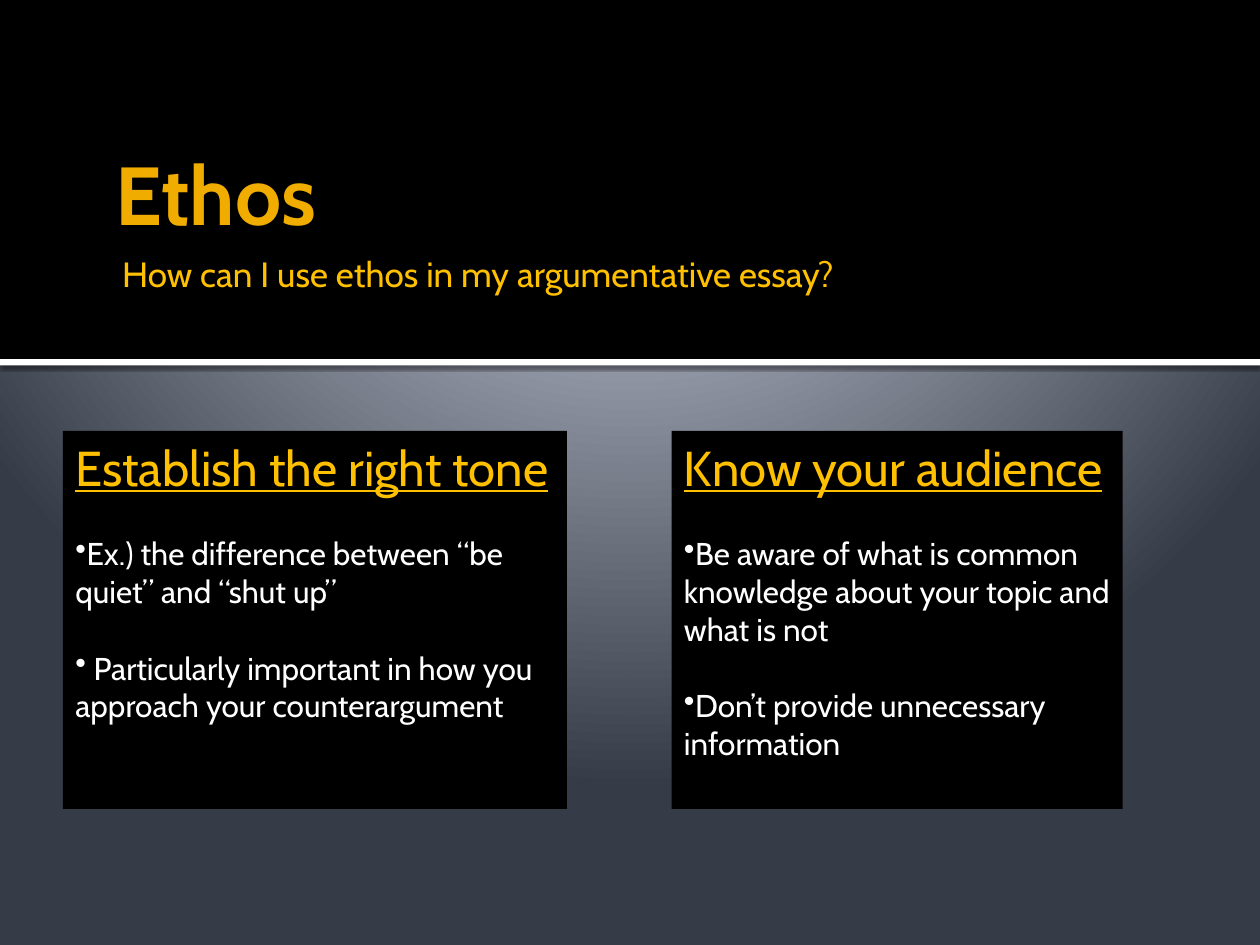
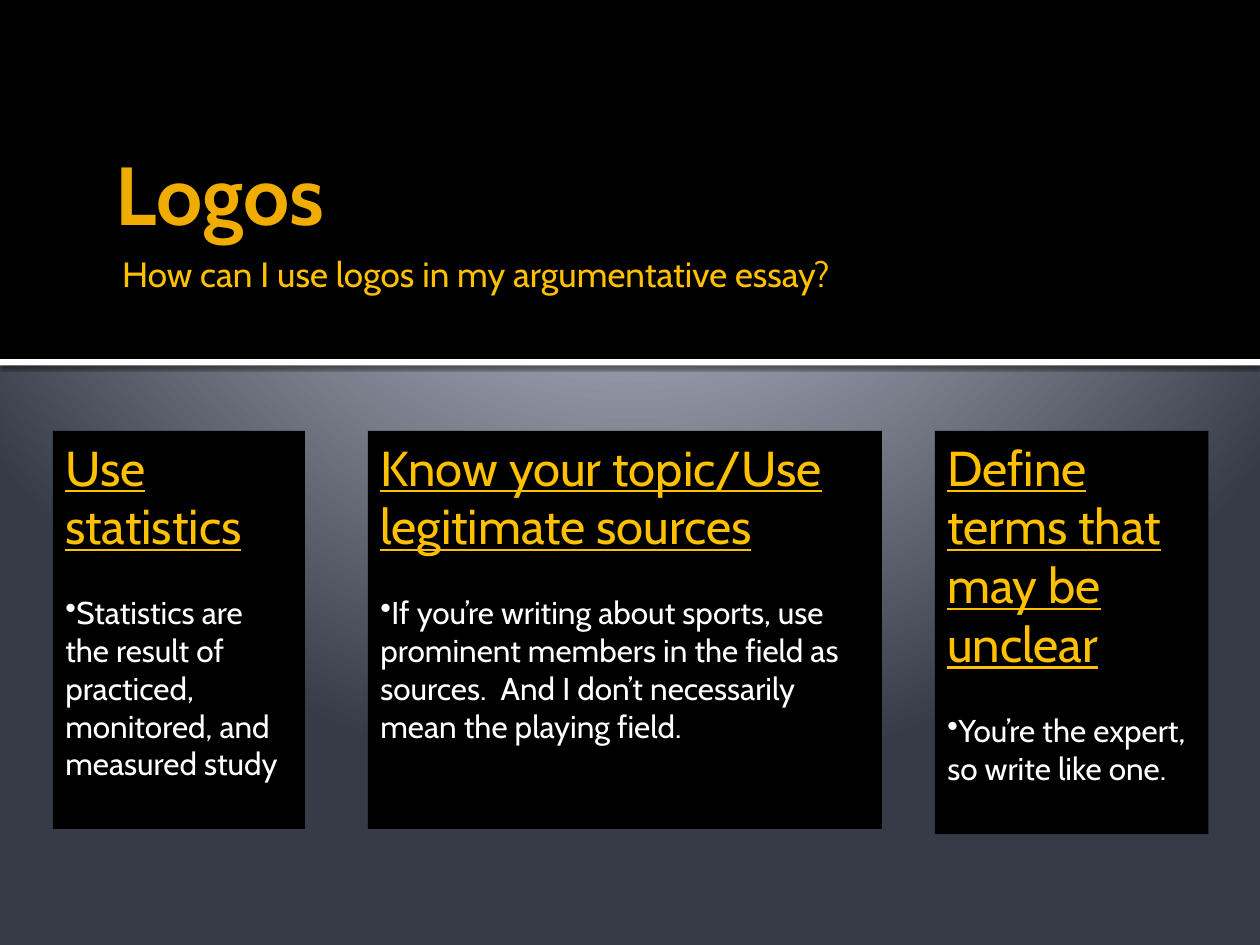
from pptx import Presentation
from pptx.dml.color import RGBColor
from pptx.enum.shapes import MSO_SHAPE
from pptx.enum.text import MSO_ANCHOR, MSO_AUTO_SIZE, PP_ALIGN
from pptx.oxml import parse_xml
from pptx.oxml.ns import nsdecls, qn
from pptx.util import Inches, Pt

RECT = MSO_SHAPE.RECTANGLE
TOP, BOTTOM = MSO_ANCHOR.TOP, MSO_ANCHOR.BOTTOM
LEFT = PP_ALIGN.LEFT
NO_FIT = MSO_AUTO_SIZE.NONE


class Theme:
    font = "Cabin"
    black, white = "000000", "FFFFFF"
    title, gold = "F0AD00", "FFC000"
    glow = [(0, "C1C5D3"), (12, "C1C5D3"), (20, "BFC4D2"), (100, "353B47")]
    title_size, sub_size, head_size, text_size = 47, 20, 28, 18
    gap = 22  # space above each bullet, in points


# Each card: left, width, height, heading, bullets
SLIDES = [
    ("Ethos", "How can I use ethos in my argumentative essay?", [
        (0.5, 4, 3, "Establish the right tone", [
            "Ex.) the difference between “be quiet” and “shut up”",
            " Particularly important in how you approach your counterargument"]),
        (5.33, 3.58, 3, "Know your audience", [
            "Be aware of what is common knowledge about your topic and what is not",
            "Don’t provide unnecessary information"]),
    ]),
    ("Logos", "How can I use logos in my argumentative essay?", [
        (0.42, 2, 3.16, "Use statistics", [
            "Statistics are the result of practiced, monitored, and measured study"]),
        (2.92, 4.08, 3.16, "Know your topic/Use legitimate sources", [
            "If you’re writing about sports, use prominent members in the field as "
            "sources.  And I don’t necessarily mean the playing field."]),
        (7.42, 2.17, 3.2, "Define terms that may be unclear", [
            "You’re the expert, so write like one."]),
    ]),
]
CARD_TOP = 3.42


def block(slide, left, top, width, height, color):
    """Add a plain filled rectangle, sized in inches."""
    shape = slide.shapes.add_shape(
        RECT, Inches(left), Inches(top), Inches(width), Inches(height))
    shape.shadow.inherit = False
    shape.fill.solid()
    shape.fill.fore_color.rgb = RGBColor.from_string(color)
    shape.line.fill.background()
    return shape


def write(para, text, size, color):
    para.text = text
    para.alignment = LEFT
    para.font.name = Theme.font
    para.font.size = Pt(size)
    para.font.color.rgb = RGBColor.from_string(color)


prs = Presentation()
prs.slide_width, prs.slide_height = Inches(10), Inches(7.5)
layout = prs.slide_layouts.get_by_name("Title Only")

# Shared background: a glow from above the slide
layout.background.fill.background()
stops = "".join(
    f'<a:gs pos="{pos * 1000}"><a:srgbClr val="{color}"/></a:gs>'
    for pos, color in Theme.glow)
back = layout.element.find(".//" + qn("p:bgPr"))
back.replace(back[0], parse_xml(
    f'<a:gradFill {nsdecls("a")} rotWithShape="1"><a:gsLst>{stops}</a:gsLst>'
    '<a:path path="circle">'
    '<a:fillToRect l="10000" t="-25000" r="10000" b="125000"/>'
    '</a:path></a:gradFill>'))

slides = [prs.slides.add_slide(layout) for _ in SLIDES]

# Shared bands: drawn once, then moved to the layout
band = block(slides[0], 0, 0, 10, 2.85, Theme.black)
rule = block(slides[0], 0, 2.85, 10, 0.05, Theme.white)
effects = rule.element.spPr.find(qn("a:effectLst"))
effects.append(parse_xml(
    f'<a:outerShdw {nsdecls("a")} blurRad="{Pt(2.5)}" dist="{Pt(0.8)}" '
    'dir="5400000" algn="t" rotWithShape="0">'
    f'<a:srgbClr val="{Theme.black}"><a:alpha val="60000"/></a:srgbClr>'
    '</a:outerShdw>'))
tree = layout.element.cSld.spTree
for place, shape in enumerate((band, rule), start=2):
    tree.insert(place, shape.element)

for slide, (name, question, cards) in zip(slides, SLIDES):
    title = slide.shapes.title
    title.left, title.top = Inches(0.82), Inches(0.13)
    title.width, title.height = Inches(8.76), Inches(1.79)
    frame = title.text_frame
    frame.auto_size = NO_FIT
    frame.vertical_anchor = BOTTOM
    frame.margin_top = frame.margin_bottom = 0
    write(frame.paragraphs[0], name, Theme.title_size, Theme.title)
    frame.paragraphs[0].font.bold = True

    sub = slide.shapes.add_textbox(
        Inches(0.81), Inches(2), Inches(8.77), Inches(0.75))
    frame = sub.text_frame
    frame.word_wrap = True
    frame.margin_left, frame.margin_right = Inches(0.16), Inches(0.05)
    frame.margin_top = frame.margin_bottom = 0
    write(frame.paragraphs[0], question, Theme.sub_size, Theme.gold)

    for left, width, height, heading, bullets in cards:
        card = block(slide, left, CARD_TOP, width, height, Theme.black)
        frame = card.text_frame
        frame.word_wrap = True
        frame.vertical_anchor = TOP
        head = frame.paragraphs[0]
        write(head, heading, Theme.head_size, Theme.gold)
        head.font.underline = True
        for bullet in bullets:
            para = frame.add_paragraph()
            write(para, bullet, Theme.text_size, Theme.white)
            para.space_before = Pt(Theme.gap)
            props = para._p.get_or_add_pPr()
            mark = parse_xml(f'<a:buChar {nsdecls("a")} char="•"/>')
            props.insert_element_before(mark, "a:tabLst", "a:defRPr", "a:extLst")

prs.save("out.pptx")
